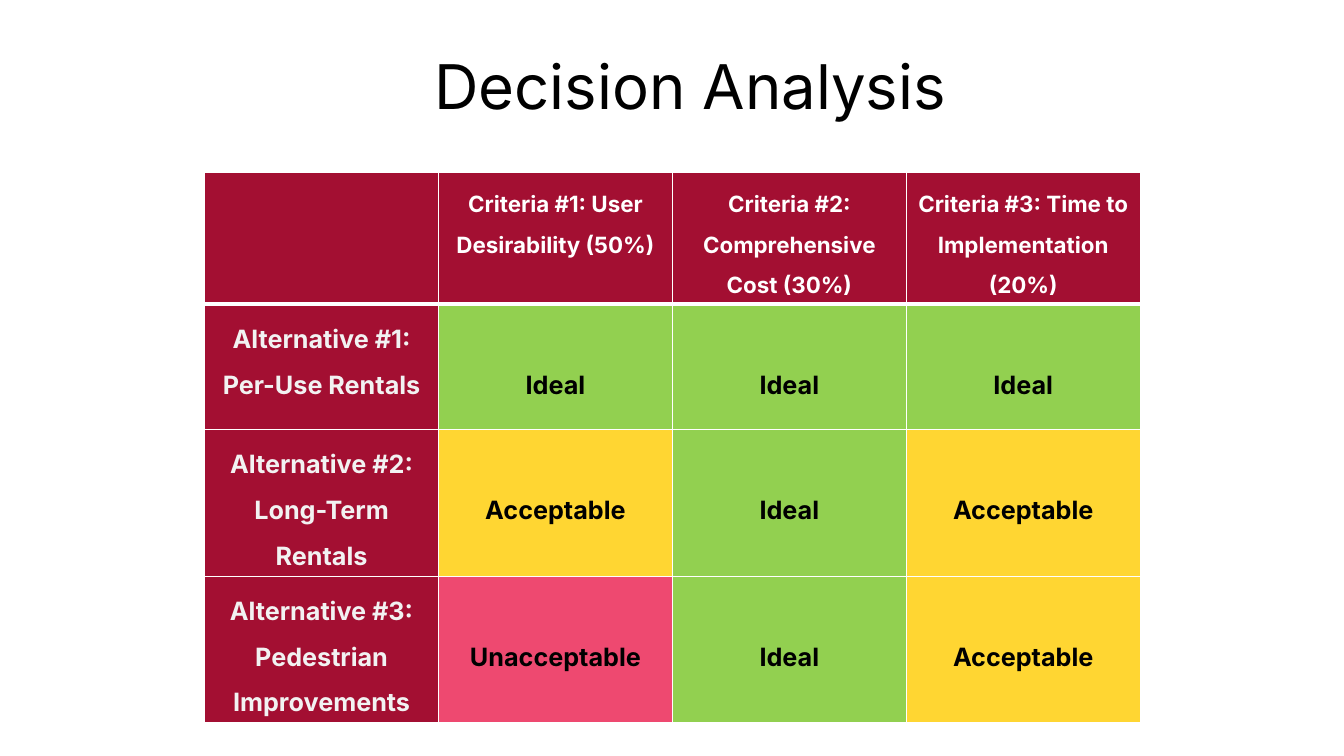
"""Build the decision analysis slide: a title above a colour-coded rating table."""
from pptx import Presentation
from pptx.dml.color import RGBColor
from pptx.enum.text import MSO_ANCHOR, MSO_AUTO_SIZE, PP_ALIGN
from pptx.oxml import parse_xml
from pptx.oxml.ns import nsdecls
from pptx.util import Inches, Pt

CENTER = PP_ALIGN.CENTER
TOP = MSO_ANCHOR.TOP
NO_AUTOFIT = MSO_AUTO_SIZE.NONE
FONT = "Inter"
CRIMSON, WHITE, PALE, BLACK = "A30F32", "FFFFFF", "F2F2F2", "000000"
RATING_FILLS = {"Ideal": "92D050", "Acceptable": "FFD632", "Unacceptable": "EE4970"}

CRITERIA = ["", "Criteria #1: User Desirability (50%)",
            "Criteria #2: Comprehensive Cost (30%)",
            "Criteria #3: Time to Implementation (20%)"]
ALTERNATIVES = [
    ["Alternative #1: Per-Use Rentals", "Ideal", "Ideal", "Ideal"],
    ["Alternative #2: Long-Term Rentals", "Acceptable", "Ideal", "Acceptable"],
    ["Alternative #3:\nPedestrian Improvements", "Unacceptable", "Ideal", "Acceptable"],
]
COLUMN_WIDTH, ROW_HEIGHT = 2.32, 1.24


def style_text(paragraph, size, color, spacing, bold):
    paragraph.alignment = CENTER
    paragraph.line_spacing = spacing
    paragraph.font.name = FONT
    paragraph.font.size = Pt(size)
    paragraph.font.bold = bold
    paragraph.font.color.rgb = RGBColor.from_string(color)


def add_border(cell, side, points):
    cell._tc.get_or_add_tcPr().append(parse_xml(
        f'<a:ln{side} {nsdecls("a")} w="{Pt(points)}"><a:solidFill>'
        f'<a:srgbClr val="{WHITE}"/></a:solidFill></a:ln{side}>'))


deck = Presentation()
deck.slide_width, deck.slide_height = Inches(13.33), Inches(7.5)
slide = deck.slides.add_slide(deck.slide_layouts[5])

title = slide.shapes.title
title.left, title.top = Inches(3.73), Inches(0.51)
title.width, title.height = Inches(6.24), Inches(0.55)
title.text_frame.text = "Decision Analysis"
title.text_frame.word_wrap = True
title.text_frame.auto_size = NO_AUTOFIT
title.text_frame.vertical_anchor = TOP
style_text(title.text_frame.paragraphs[0], 44, BLACK, 0.9, False)

rows = [CRITERIA] + ALTERNATIVES
ratings = slide.shapes.add_table(
    len(rows), len(CRITERIA), Inches(2.03), Inches(1.71),
    Inches(COLUMN_WIDTH * len(CRITERIA)), Inches(ROW_HEIGHT * len(rows))).table
ratings.horz_banding = False

for r, row in enumerate(rows):
    for c, wording in enumerate(row):
        cell = ratings.cell(r, c)
        for side in "LRTB":
            under_header = (r, side) in [(0, "B"), (1, "T")]
            add_border(cell, side, 3 if under_header else 1)
        cell.fill.solid()
        if r == 0:
            fill, look = CRIMSON, (16, WHITE, 1.5)
        elif c == 0:
            fill, look = CRIMSON, (18, PALE, 1.5)
        else:
            fill, look = RATING_FILLS[wording], (18, BLACK, 3.0)
        cell.fill.fore_color.rgb = RGBColor.from_string(fill)
        cell.text = wording
        for paragraph in cell.text_frame.paragraphs:
            style_text(paragraph, *look, True)

deck.save("out.pptx")
